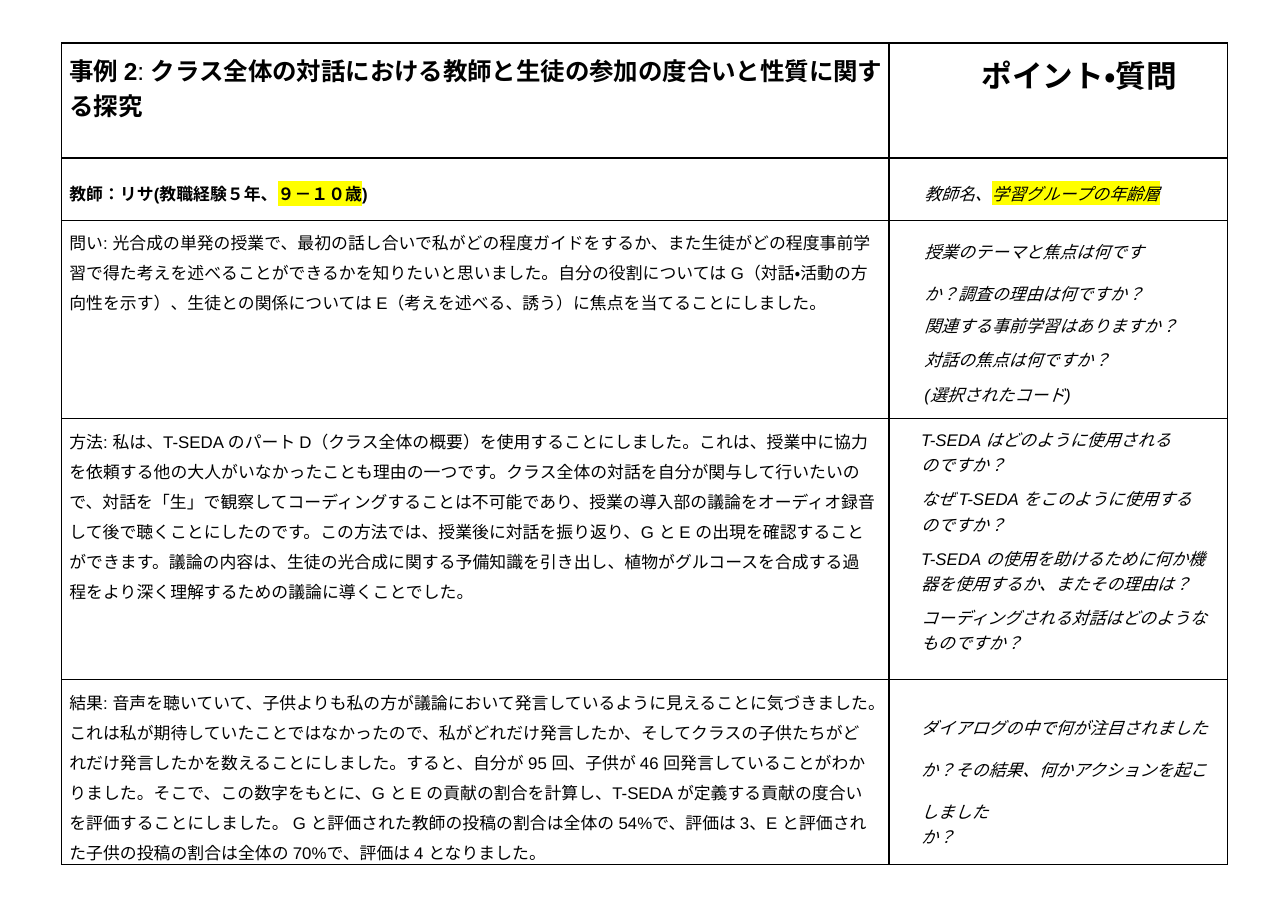
"""Build the case study table slide with its column of guiding questions."""
import pptx
import pptx.util
import pptx.dml.color
import pptx.enum.lang
import pptx.enum.text
import pptx.oxml
import pptx.oxml.ns

Inches, Pt = pptx.util.Inches, pptx.util.Pt
qn = pptx.oxml.ns.qn
TOP = pptx.enum.text.MSO_ANCHOR.TOP
MID = pptx.enum.text.MSO_ANCHOR.MIDDLE
HUES = {"ink": "000000", "mark": "FFFF00"}
NS = 'xmlns:a="http://schemas.openxmlformats.org/drawingml/2006/main"'


def para(runs, left, right=0, hang=0, **look):
    """Describe a paragraph by its runs, indents in inches and spacing."""
    return runs, {"marL": left, "marR": right, "indent": hang}, look


def edge(cell, side, width):
    """Draw one border of a cell."""
    line = pptx.oxml.parse_xml(
        f'<a:{side} {NS} w="{Pt(width)}"><a:solidFill><a:srgbClr val="{HUES["ink"]}"/>'
        f'</a:solidFill><a:prstDash val="solid"/></a:{side}>')
    cell._tc.get_or_add_tcPr().append(line)


wide = {"line_spacing": 1.73}
item = {"line_spacing": 1.03, "space_before": Pt(6)}
body = {"left": 0.07, "right": 0.11, "line_spacing": 1.23}

rows = [
    (1.04,
     (TOP, 0.08, 16, [para([("事例 2", "b"), (": ", ""),
                            ("クラス全体の対話における教師と生徒の参加の度合いと性質に関する探究", "b")], 0.07)]),
     (TOP, 0.08, 20, [para([("ポイント・質問", "b")], 0.84)])),
    (0.57,
     (MID, 0.08, 11, [para([("教師：リサ(教職経験５年、", "b"), ("９－１０歳", "bh"), (")", "b")], 0.07)]),
     (MID, 0.07, 11, [para([("教師名、", "i"), ("学習グループの年齢層", "ih")], 0.32)])),
    (1.8,
     (TOP, 0.04, 11, [para([(
         "問い: 光合成の単発の授業で、最初の話し合いで私がどの程度ガイドをするか、また生徒がどの程度"
         "事前学習で得た考えを述べることができるかを知りたいと思いました。自分の役割については G"
         "（対話・活動の方向性を示す）、生徒との関係については E（考えを述べる、誘う）に焦点を"
         "当てることにしました。", "")], **body)]),
     (TOP, 0.01, 11, [
         para([("授業のテーマと焦点は何ですか？調査の理由は何ですか？", "i")], 0.32, 0.6, **wide),
         para([("関連する事前学習はありますか？", "i")], 0.32, space_before=Pt(4.6)),
         para([("対話の焦点は何ですか？", "i")], 0.57, hang=-0.25, **item),
         para([("(選択されたコード)", "i")], 0.57, hang=-0.25, **item)])),
    (2.33,
     (TOP, 0.04, 11, [para([(
         "方法: 私は、T-SEDA のパート D（クラス全体の概要）を使用することにしました。これは、授業中に"
         "協力を依頼する他の大人がいなかったことも理由の一つです。クラス全体の対話を自分が関与して"
         "行いたいので、対話を「生」で観察してコーディングすることは不可能であり、授業の導入部の議論を"
         "オーディオ録音して後で聴くことにしたのです。この方法では、授業後に対話を振り返り、G と E の"
         "出現を確認することができます。議論の内容は、生徒の光合成に関する予備知識を引き出し、植物が"
         "グルコースを合成する過程をより深く理解するための議論に導くことでした。", "")], **body)]),
     (TOP, 0.07, 11, [
         para([("T-SEDA はどのように使用されるのですか？", "i")], 0.29, 0.4, line_spacing=1.03),
         para([("なぜ T-SEDA をこのように使用するのですか？", "i")], 0.29, 0.2, **item),
         para([("T-SEDA の使用を助けるために何か機器を使用するか、またその理由は？", "i")],
              0.29, 0.2, **item),
         para([("コーディングされる対話はどのようなものですか？", "i")], 0.29, 0.1, **item)])),
    (1.67,
     (TOP, 0.04, 11, [para([(
         "結果: 音声を聴いていて、子供よりも私の方が議論において発言しているように見えることに"
         "気づきました。これは私が期待していたことではなかったので、私がどれだけ発言したか、そして"
         "クラスの子供たちがどれだけ発言したかを数えることにしました。すると、自分が 95 回、子供が 46 "
         "回発言していることがわかりました。そこで、この数字をもとに、G と E の貢献の割合を計算し、"
         "T-SEDA が定義する貢献の度合いを評価することにしました。 G と評価された教師の投稿の割合は"
         "全体の 54%で、評価は 3、E と評価された子供の投稿の割合は全体の 70%で、評価は 4 と"
         "なりました。", "")], **body)]),
     (MID, 0.01, 11, [
         para([("ダイアログの中で何が注目されましたか？その結果、何かアクションを起こしました", "i")],
              0.29, 0.1, **wide),
         para([("か？", "i")], 0.29, line_spacing=1.02)])),
]

deck = pptx.Presentation()
deck.slide_width, deck.slide_height = Inches(11.69), Inches(8.27)
slide = deck.slides.add_slide(deck.slide_layouts[6])
high = sum(row[0] for row in rows)
table = slide.shapes.add_table(len(rows), 2, Inches(0.56), Inches(0.39),
                               Inches(10.58), Inches(high)).table
table.first_row = table.horz_banding = False
for col, width in zip(table.columns, (7.51, 3.07)):
    col.width = Inches(width)

for r, (tall, *cells) in enumerate(rows):
    table.rows[r].height = Inches(tall)
    for c, (anchor, top, size, paras) in enumerate(cells):
        cell = table.cell(r, c)
        form = {"vertical_anchor": anchor, "margin_left": 0, "margin_right": 0,
                "margin_top": Inches(top), "margin_bottom": 0}
        for key, value in form.items():
            setattr(cell, key, value)
        for side in ("lnL", "lnR", "lnT", "lnB"):
            thick = (r, side) in ((0, "lnB"), (1, "lnT"))
            edge(cell, side, 1.5 if thick else 1)
        cell.fill.background()
        frame = cell.text_frame
        for n, (runs, dents, look) in enumerate(paras):
            line = frame.add_paragraph() if n else frame.paragraphs[0]
            for key, value in look.items():
                setattr(line, key, value)
            for key, value in dents.items():
                line._p.get_or_add_pPr().set(key, str(Inches(value)))
            for text, style in runs:
                run = line.add_run()
                run.text = text
                font = run.font
                face = {"name": "Arial", "size": Pt(size), "bold": "b" in style, "italic": "i" in style,
                        "language_id": pptx.enum.lang.MSO_LANGUAGE_ID.JAPANESE}
                for key, value in face.items():
                    setattr(font, key, value)
                font.color.rgb = pptx.dml.color.RGBColor.from_string(HUES["ink"])
                if "h" in style:
                    glow = pptx.oxml.parse_xml(
                        f'<a:highlight {NS}><a:srgbClr val="{HUES["mark"]}"/></a:highlight>')
                    run._r.rPr.find(qn("a:solidFill")).addnext(glow)

deck.save("out.pptx")
